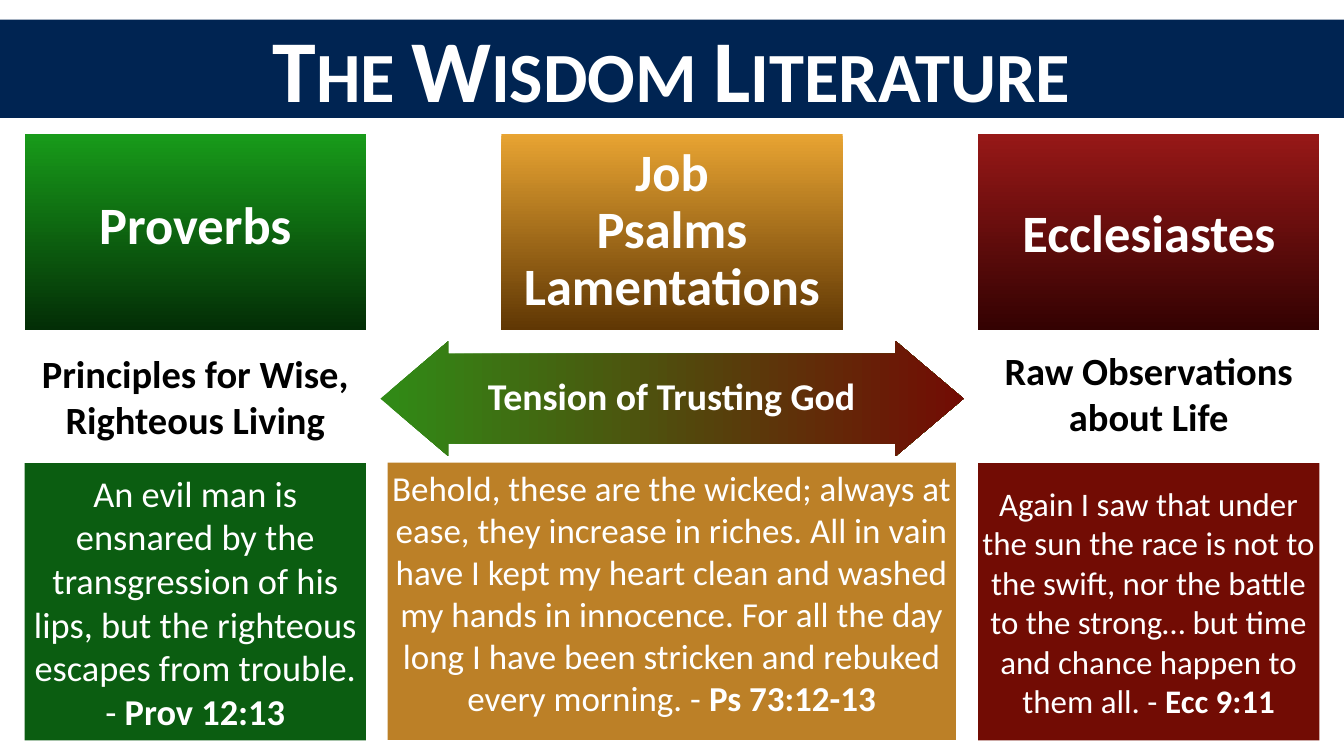
"""Build the Wisdom Literature slide."""
import pptx
import pptx.dml.color
import pptx.enum.shapes
import pptx.enum.text
import pptx.util

Inches = pptx.util.Inches
RGBColor = pptx.dml.color.RGBColor
Shape = pptx.enum.shapes.MSO_SHAPE
Anchor = pptx.enum.text.MSO_ANCHOR

WHITE = RGBColor(0xFF, 0xFF, 0xFF)
BLACK = RGBColor(0x00, 0x00, 0x00)
NAVY = RGBColor(0x00, 0x24, 0x52)
GREEN = RGBColor(0x0B, 0x5D, 0x11)
RED = RGBColor(0x72, 0x0C, 0x04)
GOLD = RGBColor(0xBC, 0x80, 0x27)
GREEN_FADE = (RGBColor(0x18, 0x9B, 0x1A), RGBColor(0x03, 0x2E, 0x06))
GOLD_FADE = (RGBColor(0xE8, 0xA4, 0x32), RGBColor(0x60, 0x37, 0x04))
RED_FADE = (RGBColor(0x97, 0x18, 0x17), RGBColor(0x34, 0x02, 0x02))
TENSION_FADE = (RGBColor(0x30, 0x8B, 0x16), RED)

LEFT, MIDDLE, RIGHT = 0.49, 9.95, 19.41
COLUMN_WIDTH = 6.77
DOWNWARD, RIGHTWARD = 270, 0


class SlideBuilder:
    """Hold the text style and the current page, and add elements to it."""

    def __init__(self, page, font="Calibri", inset=0.08):
        self.page = page
        self.font = font
        self.inset = Inches(inset)

    def shape(self, place, fill, kind=Shape.RECTANGLE, angle=DOWNWARD, parent=None):
        """Add an unlined shape with a solid colour or a pair of gradient colours."""
        shape = (parent or self.page).shapes.add_shape(kind, *map(Inches, place))
        shape.shadow.inherit = False
        shape.line.fill.background()
        if isinstance(fill, RGBColor):
            shape.fill.solid()
            shape.fill.fore_color.rgb = fill
        else:
            shape.fill.gradient()
            shape.fill.gradient_angle = angle
            for stop, color in zip(shape.fill.gradient_stops, fill):
                stop.color.rgb = color
        return shape

    def fill_text(self, box, paras, size, color=WHITE, anchor=Anchor.MIDDLE,
                  wrap=True, spacing=None, small_caps=False):
        """Set centred paragraphs, each a list of (text, bold) spans."""
        frame = box.text_frame
        frame.word_wrap = wrap
        frame.vertical_anchor = anchor
        frame.margin_left = frame.margin_right = self.inset
        frame.margin_top = frame.margin_bottom = self.inset
        for index, spans in enumerate(paras):
            para = frame.add_paragraph() if index else frame.paragraphs[0]
            para.alignment = pptx.enum.text.PP_ALIGN.CENTER
            if spacing:
                para.line_spacing = spacing
            for text, bold in spans:
                span = para.add_run()
                span.text = text
                span.font.name = self.font
                span.font.size = pptx.util.Pt(size)
                span.font.bold = bold
                span.font.color.rgb = color
                if small_caps:
                    span.font._element.set("cap", "small")

    def label(self, place, lines, size, parent=None, **style):
        """Add a text box of bold lines."""
        box = (parent or self.page).shapes.add_textbox(*map(Inches, place))
        self.fill_text(box, [[(line, True)] for line in lines], size, **style)
        if not style.get("wrap", True):
            box.text_frame.auto_size = pptx.enum.text.MSO_AUTO_SIZE.SHAPE_TO_FIT_TEXT

    def quote(self, place, fill, paras, size, anchor=Anchor.MIDDLE):
        """Add a filled panel holding a quotation."""
        self.fill_text(self.shape(place, fill), paras, size, anchor=anchor)

    def arrow(self, place, text_place, text, fill):
        """Add a grouped two-way arrow and its caption."""
        group = self.page.shapes.add_group_shape()
        arrow = self.shape(place, fill, Shape.LEFT_RIGHT_ARROW, RIGHTWARD, group)
        arrow.adjustments[0] = 0.78
        arrow.adjustments[1] = 0.59
        self.label(text_place, [text], 54, group, spacing=0.9)


def main():
    """Lay out the slide and save it."""
    deck = pptx.Presentation()
    deck.slide_width, deck.slide_height = Inches(26.67), Inches(15)
    builder = SlideBuilder(deck.slides.add_slide(deck.slide_layouts[6]))

    builder.shape((0, 0.39, 26.67, 1.95), NAVY)
    builder.label((0.3, -0.01, 26.06, 2.68), ["The Wisdom Literature"], 126,
                  small_caps=True)

    books = [
        (LEFT, GREEN_FADE, (1.88, 3.72, 3.99, 1.42), ["Proverbs"], None),
        (MIDDLE, GOLD_FADE, (10.31, 2.74, 6.05, 3.7),
         ["Job", "Psalms", "Lamentations"], 0.9),
        (RIGHT, RED_FADE, (20.2, 3.89, 5.2, 1.42), ["Ecclesiastes"], None),
    ]
    for left, fade, place, names, spacing in books:
        builder.shape((left, 2.65, COLUMN_WIDTH, 3.89), fade)
        builder.label(place, names, 75, wrap=False, spacing=spacing)

    themes = [(LEFT, 6.89, "Principles for Wise, Righteous Living"),
              (RIGHT, 6.83, "Raw Observations about Life")]
    for left, top, theme in themes:
        builder.label((left, top, COLUMN_WIDTH, 1.95), [theme], 55, color=BLACK)

    builder.arrow((7.55, 6.77, 11.57, 2.28), (7.56, 7.26, 11.54, 1.29),
                  "Tension of Trusting God", TENSION_FADE)

    builder.quote((LEFT, 9.19, COLUMN_WIDTH, 5.5), GREEN, [
        [("An evil man is ensnared by the transgression of his lips, "
          "but the righteous escapes from trouble.", False)],
        [("- ", False), ("Prov 12:13", True)]], 52)
    builder.quote((RIGHT, 9.19, COLUMN_WIDTH, 5.5), RED, [
        [("Again I saw that under the sun the race is not to the swift, "
          "nor the battle to the strong… but time and chance happen to "
          "them all. - ", False), ("Ecc 9:11", True)]], 47)
    builder.quote((7.69, 9.18, 11.28, 5.5), GOLD, [
        [("Behold, these are the wicked; always at ease, they increase in "
          "riches. All in vain have I kept my heart clean and washed my hands "
          "in innocence. For all the day long I have been stricken and "
          "rebuked every morning. - ", False), ("Ps 73:12-13", True)]],
        50, Anchor.TOP)

    deck.save("out.pptx")


if __name__ == "__main__":
    main()
